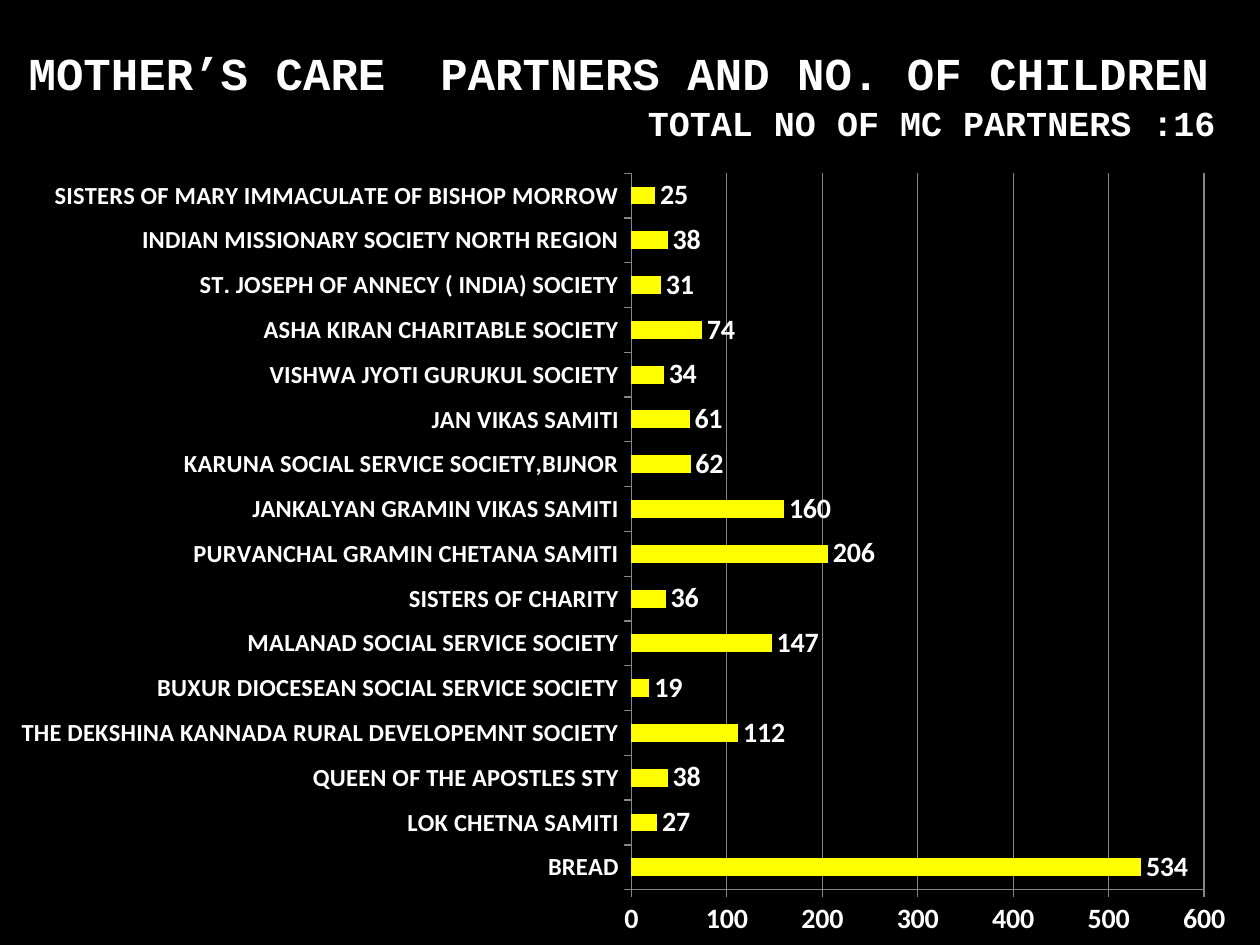
from lxml import etree
from pptx import Presentation
from pptx.chart import data as cd
from pptx.dml.color import RGBColor
from pptx.enum import chart as ch, shapes, text
from pptx.oxml import ns
from pptx.util import Inches, Pt

BLACK = RGBColor(0, 0, 0)
WHITE = RGBColor(255, 255, 255)
YELLOW = RGBColor(255, 255, 0)
GRAY = RGBColor(0x86, 0x86, 0x86)
HEAD_FONT, CHART_FONT = "Courier New", "Calibri"

PARTNERS = [
    ("BREAD", 534),
    ("LOK CHETNA SAMITI", 27),
    ("QUEEN OF THE APOSTLES STY", 38),
    ("THE DEKSHINA KANNADA RURAL DEVELOPEMNT SOCIETY", 112),
    ("BUXUR DIOCESEAN SOCIAL SERVICE SOCIETY", 19),
    ("MALANAD SOCIAL SERVICE SOCIETY", 147),
    ("SISTERS OF CHARITY", 36),
    ("PURVANCHAL GRAMIN CHETANA SAMITI", 206),
    ("JANKALYAN GRAMIN VIKAS SAMITI", 160),
    ("KARUNA SOCIAL SERVICE SOCIETY,BIJNOR", 62),
    ("JAN VIKAS SAMITI", 61),
    ("VISHWA JYOTI GURUKUL SOCIETY", 34),
    ("ASHA KIRAN CHARITABLE SOCIETY", 74),
    ("ST. JOSEPH OF ANNECY ( INDIA) SOCIETY", 31),
    ("INDIAN MISSIONARY SOCIETY NORTH REGION", 38),
    ("SISTERS OF MARY IMMACULATE OF BISHOP MORROW", 25),
]


def set_font(font, name, size):
    font.name, font.size, font.bold = name, Pt(size), True
    font.color.rgb = WHITE


def set_plot_area(chart, x, y, w, h):
    """Fix the inner plot area, in fractions of the chart frame."""
    area = chart.element.chart.plotArea if hasattr(chart, "element") else chart._chartSpace.chart.plotArea
    for old in area.findall(ns.qn("c:layout")):
        area.remove(old)
    layout = etree.Element(ns.qn("c:layout"))
    manual = etree.SubElement(layout, ns.qn("c:manualLayout"))
    settings = [("layoutTarget", "inner"), ("xMode", "edge"), ("yMode", "edge"),
                ("x", x), ("y", y), ("w", w), ("h", h)]
    for tag, val in settings:
        etree.SubElement(manual, ns.qn("c:" + tag)).set("val", str(val))
    area.insert(0, layout)


class Deck:
    def __init__(self, width, height):
        self.prs = Presentation()
        self.prs.slide_width, self.prs.slide_height = Inches(width), Inches(height)
        self.slide = None

    def add_slide(self):
        self.slide = self.prs.slides.add_slide(self.prs.slide_layouts[5])
        fill = self.slide.background.fill
        fill.solid()
        fill.fore_color.rgb = BLACK

    def set_text(self, sp, words, size, align):
        tf = sp.text_frame
        tf.word_wrap = True
        tf.auto_size = text.MSO_AUTO_SIZE.NONE
        tf.vertical_anchor = text.MSO_ANCHOR.MIDDLE
        p = tf.paragraphs[0]
        p.text, p.alignment = words, align
        set_font(p.font, HEAD_FONT, size)

    def title(self, words, x, y, w, h, size):
        sp = self.slide.shapes.title
        sp.left, sp.top, sp.width, sp.height = map(Inches, (x, y, w, h))
        self.set_text(sp, words, size, text.PP_ALIGN.CENTER)

    def label(self, words, x, y, w, h, size):
        sp = self.slide.shapes.add_shape(
            shapes.MSO_SHAPE.RECTANGLE, *map(Inches, (x, y, w, h)))
        sp.shadow.inherit = False
        sp.fill.solid()
        sp.fill.fore_color.rgb = BLACK
        sp.line.color.rgb = BLACK
        sp.line.width = Pt(2)
        self.set_text(sp, words, size, text.PP_ALIGN.RIGHT)

    def bar_chart(self, rows, x, y, w, h):
        data = cd.CategoryChartData()
        data.categories = [name for name, _ in rows]
        data.add_series("Series 1", [count for _, count in rows])
        chart = self.slide.shapes.add_chart(
            ch.XL_CHART_TYPE.BAR_CLUSTERED, *map(Inches, (x, y, w, h)), data).chart
        chart.has_legend = chart.has_title = False
        chart.font.name, chart.font.size = CHART_FONT, Pt(18)

        for axis, size in ((chart.category_axis, 14), (chart.value_axis, 16)):
            set_font(axis.tick_labels.font, CHART_FONT, size)
            axis.major_tick_mark = ch.XL_TICK_MARK.OUTSIDE
            axis.format.line.color.rgb = GRAY
        values = chart.value_axis
        values.minimum_scale, values.maximum_scale, values.major_unit = 0, 600, 100
        values.has_major_gridlines = True
        values.major_gridlines.format.line.color.rgb = GRAY

        plot = chart.plots[0]
        plot.gap_width = 150
        plot.vary_by_categories = False
        fill = plot.series[0].format.fill
        fill.solid()
        fill.fore_color.rgb = YELLOW
        plot.has_data_labels = True
        labels = plot.data_labels
        labels.show_value = True
        labels.position = ch.XL_LABEL_POSITION.OUTSIDE_END
        set_font(labels.font, CHART_FONT, 16)
        return chart


def main():
    deck = Deck(10, 7.5)
    deck.add_slide()
    deck.title("MOTHER’S CARE  PARTNERS AND NO. OF CHILDREN", 0.08, 0.28, 9.67, 0.58, 26.1)
    chart = deck.bar_chart(PARTNERS, 0.08, 1.25, 9.67, 6.25)
    set_plot_area(chart, 0.51, 0.02, 0.47, 0.91)
    deck.label("TOTAL NO OF MC PARTNERS :16", 4.83, 0.83, 4.92, 0.29, 20)
    deck.prs.save("out.pptx")


if __name__ == "__main__":
    main()
